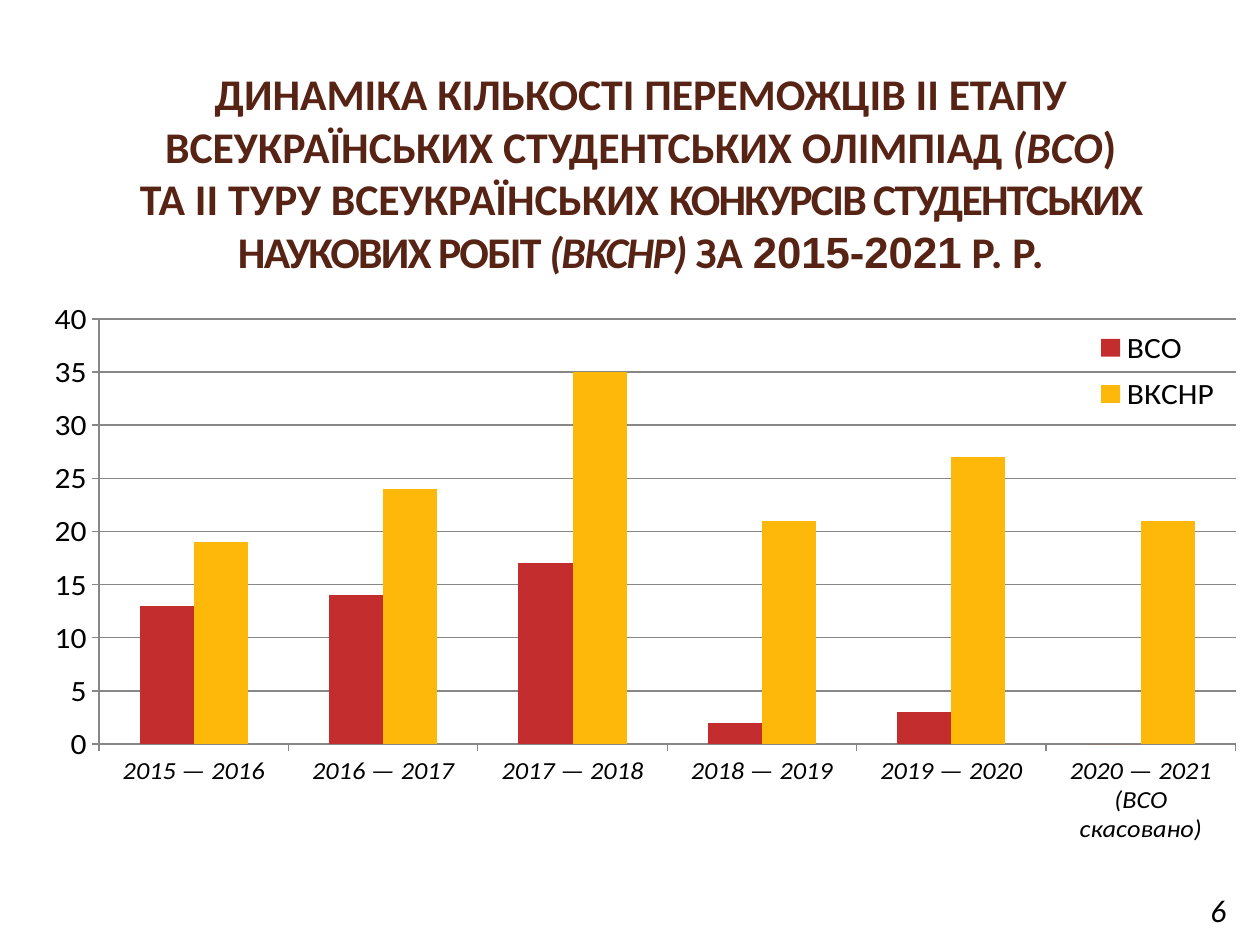
"""Builds a slide with a column chart of student contest winners by year."""
from lxml import etree
from pptx import Presentation
from pptx.chart.data import CategoryChartData
from pptx.dml.color import RGBColor
from pptx.enum.chart import XL_CHART_TYPE, XL_LEGEND_POSITION, XL_TICK_MARK
from pptx.enum.text import MSO_ANCHOR, MSO_AUTO_SIZE, PP_ALIGN
from pptx.oxml.ns import qn
from pptx.util import Pt

COLUMNS = XL_CHART_TYPE.COLUMN_CLUSTERED
RIGHT = XL_LEGEND_POSITION.RIGHT
OUTSIDE = XL_TICK_MARK.OUTSIDE
BOTTOM = MSO_ANCHOR.BOTTOM
NO_FIT = MSO_AUTO_SIZE.NONE
CENTER = PP_ALIGN.CENTER

FONT, BROWN, BLACK, GREY = "Calibri", "572314", "000000", "878787"
TITLE = [
    ("ДИНАМІКА КІЛЬКОСТІ ПЕРЕМОЖЦІВ II ЕТАПУ ВСЕУКРАЇНСЬКИХ СТУДЕНТСЬКИХ ОЛІМПІАД ", {}),
    ("(ВСО", {"italic": True}),
    (")", {}),
    ("\n", {}),
    ("ТА II ТУРУ ВСЕУКРАЇНСЬКИХ ", {}),
    ("КОНКУРСІВ СТУДЕНТСЬКИХ НАУКОВИХ РОБІТ ", {"spacing": -1}),
    ("(ВКСНР) ", {"italic": True, "spacing": -1}),
    ("ЗА ", {}),
    ("2015-2021", {"name": "Arial"}),
    (" Р. Р.", {}),
]
YEARS = ["2015 — 2016", "2016 — 2017", "2017 — 2018", "2018 — 2019",
         "2019 — 2020", "2020 — 2021 (ВСО скасовано)"]
SERIES = [
    ("ВСО", (13, 14, 17, 2, 3, 0), "C32D2E"),
    ("ВКСНР", (19, 24, 35, 21, 27, 21), "FEB80A"),
]
TITLE_BOX = (36.7, 31.7, 658.8, 130.3)
CHART_BOX = (20.2, 167.8, 686.2, 314.6)
NUMBER_BOX = (678.2, 496.8, 36, 37.4)
PLOT_AREA = (0.053, 0.049, 0.947, 0.825)
LEGEND_AREA = (0.88, 0.05, 0.11, 0.2)


def rgb(color):
    return RGBColor.from_string(color)


def style(font, size, color=BLACK, name=FONT, bold=False, italic=False):
    font.size, font.name, font.bold, font.italic = Pt(size), name, bold, italic
    font.color.rgb = rgb(color)


def add_run(p, text, size, color, spacing=0, **font):
    r = p.add_run()
    r.text = text
    style(r.font, size, color, **font)
    if spacing:
        r.font._element.set("spc", str(spacing * 100))


def set_layout(parent, index, area, inner=False):
    for old in parent.findall(qn("c:layout")):
        parent.remove(old)
    layout = etree.Element(qn("c:layout"))
    manual = etree.SubElement(layout, qn("c:manualLayout"))
    values = [("layoutTarget", "inner")] if inner else []
    values += [("xMode", "edge"), ("yMode", "edge"), *zip("xywh", area)]
    for tag, value in values:
        etree.SubElement(manual, qn("c:" + tag)).set("val", str(value))
    parent.insert(index, layout)


def add_title(s):
    sp = s.shapes.title
    sp.left, sp.top, sp.width, sp.height = map(Pt, TITLE_BOX)
    tf = sp.text_frame
    tf.word_wrap, tf.auto_size, tf.vertical_anchor = True, NO_FIT, BOTTOM
    p = tf.paragraphs[0]
    p.alignment = CENTER
    for text, options in TITLE:
        if text == "\n":
            p.add_line_break()
        else:
            add_run(p, text, 25, BROWN, bold=True, **options)


def add_winners_chart(s):
    data = CategoryChartData()
    data.categories = YEARS
    for name, values, _ in SERIES:
        data.add_series(name, values)
    chart = s.shapes.add_chart(COLUMNS, *map(Pt, CHART_BOX), data).chart
    style(chart.font, 18)
    chart.has_title = False
    plot = chart.plots[0]
    plot.gap_width, plot.overlap, plot.vary_by_categories = 150, 0, False
    for series, (_, _, color) in zip(plot.series, SERIES):
        series.format.fill.solid()
        series.format.fill.fore_color.rgb = rgb(color)
    years, counts = chart.category_axis, chart.value_axis
    style(years.tick_labels.font, 15, italic=True)
    counts.minimum_scale, counts.maximum_scale, counts.major_unit = 0, 40, 5
    counts.has_major_gridlines = True
    for axis in (years, counts):
        axis.major_tick_mark = OUTSIDE
    for part in (years, counts, counts.major_gridlines):
        part.format.line.color.rgb = rgb(GREY)
        part.format.line.width = Pt(0.75)
    chart.has_legend = True
    chart.legend.position = RIGHT
    chart.legend.include_in_layout = False
    style(chart.legend.font, 18)
    set_layout(chart.element.find(".//" + qn("c:plotArea")), 0, PLOT_AREA, inner=True)
    set_layout(chart.element.find(".//" + qn("c:legend")), 1, LEGEND_AREA)


def add_page_number(s):
    tf = s.shapes.add_textbox(*map(Pt, NUMBER_BOX)).text_frame
    tf.word_wrap, tf.vertical_anchor = True, BOTTOM
    p = tf.paragraphs[0]
    p.alignment = CENTER
    add_run(p, "6", 18, BLACK, italic=True)


def main():
    prs = Presentation()
    prs.slide_width, prs.slide_height = Pt(720), Pt(540)
    s = prs.slides.add_slide(prs.slide_layouts[5])
    add_title(s)
    add_winners_chart(s)
    add_page_number(s)
    prs.save("out.pptx")


if __name__ == "__main__":
    main()
